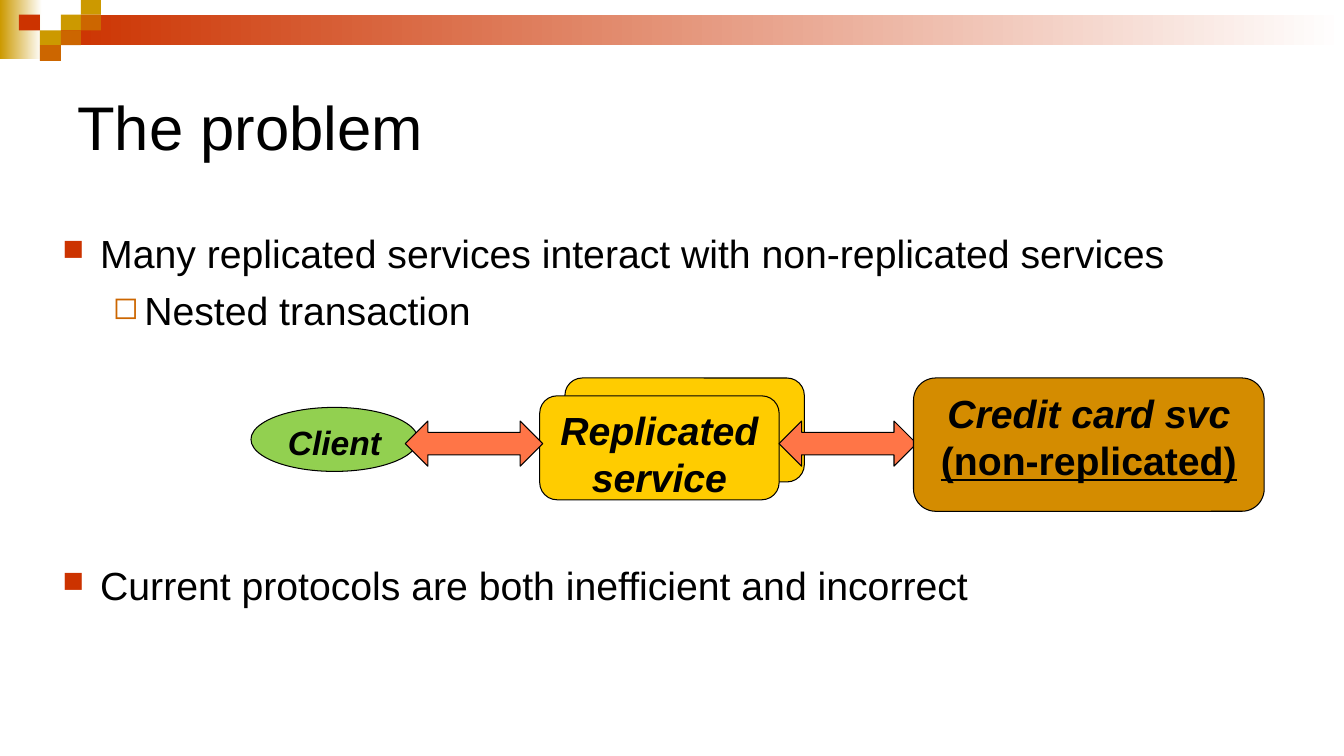
"""Build the slide about replicated services calling non-replicated ones."""
from lxml.etree import SubElement
from pptx import Presentation
from pptx.dml.color import RGBColor
from pptx.enum.shapes import MSO_SHAPE as Shape
from pptx.enum.text import MSO_ANCHOR as Anchor, MSO_AUTO_SIZE as AutoSize, PP_ALIGN as Align
from pptx.oxml.ns import qn
from pptx.util import Pt

EMU_PER_PX = 9525
FONT = "Arial"
BLACK = RGBColor(0x00, 0x00, 0x00)
WHITE = RGBColor(0xFF, 0xFF, 0xFF)
RED = RGBColor(0xCC, 0x33, 0x00)
GOLD = RGBColor(0xCC, 0x99, 0x00)
ORANGE = RGBColor(0xCC, 0x66, 0x00)
GREEN = RGBColor(0x92, 0xD0, 0x50)
YELLOW = RGBColor(0xFF, 0xCC, 0x00)
CORAL = RGBColor(0xFF, 0x75, 0x47)
OCHRE = RGBColor(0xD4, 0x8C, 0x00)

MOSAIC_X = (18, 38, 58, 77, 96)
MOSAIC_Y = (0, 14, 29, 43, 58)
MOSAIC = (
    (2, 1, GOLD), (3, 0, GOLD), (3, 1, ORANGE), (1, 2, GOLD),
    (0, 1, RED), (2, 2, ORANGE), (1, 3, ORANGE),
)


def px(*lengths):
    """Turn pixel lengths into EMU."""
    return [length * EMU_PER_PX for length in lengths]


def write_text(paragraph, text, size=28, bold=False, italic=False, underline=False,
               align=Align.LEFT, before=0):
    """Write one formatted run into a paragraph."""
    paragraph.alignment = align
    paragraph.space_before = Pt(before)
    run = paragraph.add_run()
    run.text = text
    font = run.font
    font.name, font.size, font.color.rgb = FONT, Pt(size), BLACK
    font.bold, font.italic, font.underline = bold, italic, underline


def add_bullet(paragraph, char, color, percent, margin, hang):
    """Give a paragraph a coloured bullet with a hanging indent."""
    properties = paragraph._p.get_or_add_pPr()
    indent, left = px(-hang, margin)
    properties.set("marL", str(left))
    properties.set("indent", str(indent))
    bullet_color = SubElement(properties, qn("a:buClr"))
    SubElement(bullet_color, qn("a:srgbClr"), val=str(color))
    SubElement(properties, qn("a:buSzPct"), val=str(percent * 1000))
    SubElement(properties, qn("a:buChar"), char=char)


def add_block(slide, kind, box, color, fade=False, outlined=False):
    """Add a preset shape filled with a colour, or with its fade to white."""
    block = slide.shapes.add_shape(kind, *px(*box))
    block.shadow.inherit = False
    if fade:
        block.fill.gradient()
        block.fill.gradient_angle = 0
        for stop, stop_color in zip(block.fill.gradient_stops, (color, WHITE)):
            stop.color.rgb = stop_color
    else:
        block.fill.solid()
        block.fill.fore_color.rgb = color
    if outlined:
        block.line.color.rgb = BLACK
        block.line.width = Pt(0.75)
    else:
        block.line.fill.background()
    return block


def add_node(slide, kind, box, color, lines=()):
    """Add an outlined diagram node with centred lines of (text, format)."""
    frame = add_block(slide, kind, box, color, outlined=True).text_frame
    frame.word_wrap = False
    frame.vertical_anchor = Anchor.TOP
    for index, (text, style) in enumerate(lines):
        paragraph = frame.add_paragraph() if index else frame.paragraphs[0]
        write_text(paragraph, text, bold=True, align=Align.CENTER, **style)


def add_header(slide):
    """Add the fading bars and the mosaic at the top."""
    add_block(slide, Shape.RECTANGLE, (0, 0, 40, 56), GOLD, fade=True)
    add_block(slide, Shape.RECTANGLE, (58, 14, 1222, 29), RED, fade=True)
    for column, row, color in MOSAIC:
        left, right = MOSAIC_X[column:column + 2]
        top, bottom = MOSAIC_Y[row:row + 2]
        add_block(slide, Shape.RECTANGLE, (left, top, right - left, bottom - top), color)


def add_title(slide, text):
    """Place and fill the title placeholder."""
    title = slide.shapes.title
    title.left, title.top, title.width, title.height = px(64, 48, 1152, 144)
    frame = title.text_frame
    frame.auto_size = AutoSize.NONE
    frame.vertical_anchor = Anchor.MIDDLE
    write_text(frame.paragraphs[0], text, size=44)


def add_points(slide):
    """Add the bulleted points, leaving room for the diagram."""
    frame = slide.shapes.add_textbox(*px(50, 214, 1152, 408)).text_frame
    frame.word_wrap = True
    square, hollow = ("■", RED, 75, 36, 36), ("◻", ORANGE, 80, 78, 30)
    points = (
        ("Many replicated services interact with non-replicated services", 4, square),
        ("Nested transaction", 7, hollow),
        ("Current protocols are both inefficient and incorrect", 163, square),
    )
    for index, (text, before, bullet) in enumerate(points):
        paragraph = frame.add_paragraph() if index else frame.paragraphs[0]
        write_text(paragraph, text, before=before)
        add_bullet(paragraph, *bullet)


def add_diagram(slide):
    """Add the client, the replicated service and the card service."""
    italic = {"italic": True}
    add_node(slide, Shape.OVAL, (239, 388, 159, 61), GREEN,
             [("Client", {"italic": True, "size": 24})])
    add_node(slide, Shape.ROUNDED_RECTANGLE, (538, 360, 228, 99), YELLOW)
    add_node(slide, Shape.ROUNDED_RECTANGLE, (514, 377, 228, 99), YELLOW,
             [("Replicated", italic), ("service", italic)])
    for left in (742, 386):
        add_node(slide, Shape.LEFT_RIGHT_ARROW, (left, 401, 131, 43), CORAL)
    add_node(slide, Shape.ROUNDED_RECTANGLE, (870, 360, 334, 127), OCHRE,
             [("Credit card svc", italic), ("(non-replicated)", {"underline": True})])


def main():
    """Build and save the presentation."""
    deck = Presentation()
    deck.slide_width, deck.slide_height = px(1280, 720)
    slide = deck.slides.add_slide(deck.slide_layouts[5])
    add_header(slide)
    add_title(slide, "The problem")
    add_points(slide)
    add_diagram(slide)
    deck.save("out.pptx")


if __name__ == "__main__":
    main()
